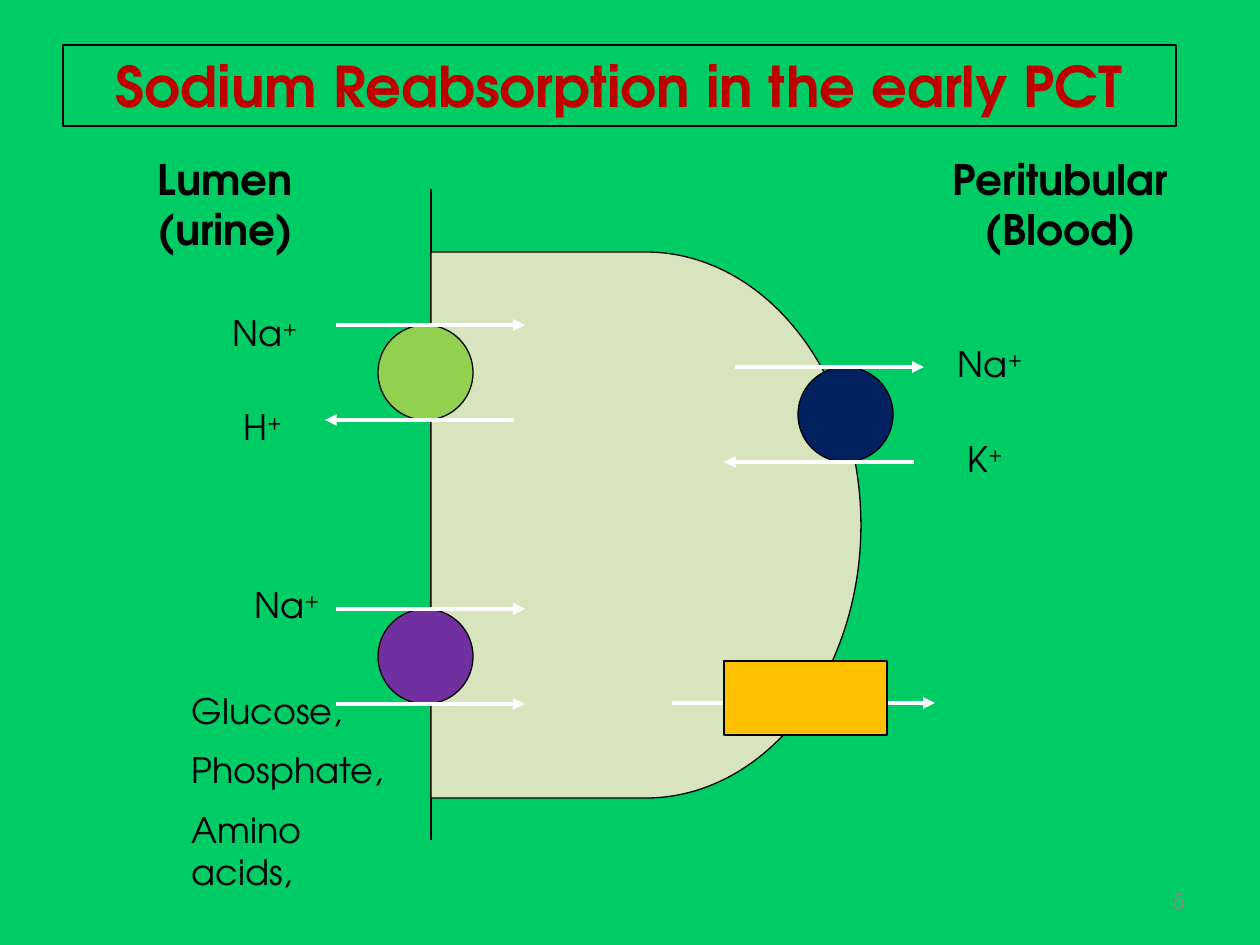
from dataclasses import dataclass

from lxml import etree
from pptx import Presentation
from pptx.dml.color import RGBColor
from pptx.enum.shapes import MSO_CONNECTOR, MSO_SHAPE
from pptx.enum.text import MSO_ANCHOR, MSO_AUTO_SIZE, PP_ALIGN
from pptx.oxml.ns import qn
from pptx.util import Emu, Pt

STRAIGHT = MSO_CONNECTOR.STRAIGHT
OVAL, RECTANGLE, DELAY = MSO_SHAPE.OVAL, MSO_SHAPE.RECTANGLE, MSO_SHAPE.FLOWCHART_DELAY
LEFT, CENTER, RIGHT = PP_ALIGN.LEFT, PP_ALIGN.CENTER, PP_ALIGN.RIGHT
TOP, MIDDLE = MSO_ANCHOR.TOP, MSO_ANCHOR.MIDDLE
EMU_PER_PX = 914400 / 126


@dataclass(frozen=True)
class Theme:
    font: str = "TeX Gyre Adventor"
    background: str = "00CC66"
    ink: str = "000000"
    title: str = "C00000"
    number: str = "8C8C8C"
    arrow: str = "FFFFFF"
    cell: str = "D7E4BD"
    exchanger: str = "92D050"
    pump: str = "002060"
    cotransporter: str = "7030A0"
    channel: str = "FFC000"
    title_size: int = 32
    side_size: int = 24
    solute_size: int = 20
    number_size: int = 12
    outline: float = 0.75
    arrow_width: float = 2.25


THEME = Theme()


@dataclass(frozen=True)
class Box:
    left: int
    top: int
    width: int
    height: int


@dataclass(frozen=True)
class Style:
    size: int
    color: str = THEME.ink
    bold: bool = False
    align: PP_ALIGN = LEFT
    anchor: MSO_ANCHOR = TOP
    gap: int = 0


@dataclass(frozen=True)
class Ion:
    symbol: str
    left: int
    top: int


@dataclass(frozen=True)
class Carrier:
    """A round membrane protein; each arrow is (start x, end x) at its top or bottom."""
    left: int
    top: int
    color: str
    upper: tuple[int, int]
    lower: tuple[int, int]


SOLUTE = Style(THEME.solute_size, gap=10)
SIDE = Style(THEME.side_size, bold=True, align=CENTER)
TITLE = Style(THEME.title_size, THEME.title, bold=True, align=CENTER)
NUMBER = Style(THEME.number_size, THEME.number, align=RIGHT, anchor=MIDDLE)

DIAMETER = 95
WALL_X = 431
WALL_SPANS = ((189, 325), (420, 609), (703, 840))
CELL = Box(WALL_X, 252, 430, 546)
CHANNEL = Box(724, 661, 163, 74)
CARRIERS = (
    Carrier(378, 325, THEME.exchanger, (336, 525), (514, 325)),
    Carrier(378, 609, THEME.cotransporter, (336, 525), (336, 525)),
    Carrier(798, 367, THEME.pump, (735, 924), (914, 724)),
)
IONS = (
    Ion("Na", 220, 305),
    Ion("H", 231, 399),
    Ion("Na", 242, 577),
    Ion("Na", 945, 336),
    Ion("K", 955, 431),
)
SIDES = (
    (Box(126, 147, 199, 115), ("Lumen", "(urine)")),
    (Box(924, 147, 273, 115), ("Peritubular", "(Blood)")),
)


def px(length: int) -> Emu:
    return Emu(round(length * EMU_PER_PX))


def rgb(color: str) -> RGBColor:
    return RGBColor.from_string(color)


def place(shape, box: Box) -> None:
    shape.left, shape.top = px(box.left), px(box.top)
    shape.width, shape.height = px(box.width), px(box.height)


def outline(line, color: str, width: float) -> None:
    line.color.rgb = rgb(color)
    line.width = Pt(width)


def add_run(paragraph, words: str, style: Style, superscript: bool = False) -> None:
    run = paragraph.add_run()
    run.text = words
    run.font.name = THEME.font
    run.font.size = Pt(style.size)
    run.font.bold = style.bold
    run.font.color.rgb = rgb(style.color)
    if superscript:
        run.font._element.set("baseline", "30000")


def write(shape, lines: tuple[str, ...], style: Style) -> None:
    frame = shape.text_frame
    frame.word_wrap = True
    frame.auto_size = MSO_AUTO_SIZE.NONE
    frame.vertical_anchor = style.anchor
    for index, words in enumerate(lines):
        paragraph = frame.add_paragraph() if index else frame.paragraphs[0]
        paragraph.alignment = style.align
        paragraph.space_before = Pt(style.gap if index else 0)
        add_run(paragraph, words, style)


def remove_bullets(shape) -> None:
    for paragraph in shape.text_frame.paragraphs:
        properties = paragraph._p.get_or_add_pPr()
        properties.set("marL", "0")
        properties.set("indent", "0")
        etree.SubElement(properties, qn("a:buNone"))


def add_text(slide, box: Box, lines: tuple[str, ...], style: Style):
    label = slide.shapes.add_textbox(0, 0, 0, 0)
    place(label, box)
    write(label, lines, style)
    return label


def add_ion(slide, ion: Ion) -> None:
    label = add_text(slide, Box(ion.left, ion.top, 95, 54), (ion.symbol,), SOLUTE)
    add_run(label.text_frame.paragraphs[0], "+", SOLUTE, superscript=True)


def add_solid(slide, kind: MSO_SHAPE, box: Box, color: str) -> None:
    solid = slide.shapes.add_shape(kind, 0, 0, 0, 0)
    place(solid, box)
    solid.shadow.inherit = False
    solid.fill.solid()
    solid.fill.fore_color.rgb = rgb(color)
    outline(solid.line, THEME.ink, THEME.outline)


def add_line(slide, start: tuple[int, int], end: tuple[int, int], color: str, width: float):
    connector = slide.shapes.add_connector(STRAIGHT, *map(px, start + end))
    outline(connector.line, color, width)
    etree.SubElement(connector._element.spPr, qn("a:effectLst"))
    return connector


def add_arrow(slide, span: tuple[int, int], y: int) -> None:
    arrow = add_line(slide, (span[0], y), (span[1], y), THEME.arrow, THEME.arrow_width)
    etree.SubElement(arrow.line._get_or_add_ln(), qn("a:tailEnd"), type="triangle")


def add_carrier(slide, carrier: Carrier) -> None:
    add_solid(slide, OVAL, Box(carrier.left, carrier.top, DIAMETER, DIAMETER), carrier.color)
    add_arrow(slide, carrier.upper, carrier.top)
    add_arrow(slide, carrier.lower, carrier.top + DIAMETER)


def main() -> None:
    deck = Presentation()
    deck.slide_width, deck.slide_height = px(1260), px(945)
    slide = deck.slides.add_slide(deck.slide_layouts[1])
    slide.background.fill.solid()
    slide.background.fill.fore_color.rgb = rgb(THEME.background)

    title, solutes = slide.shapes.title, slide.placeholders[1]
    place(title, Box(63, 45, 1113, 81))
    write(title, ("Sodium Reabsorption in the early PCT",), TITLE)
    outline(title.line, THEME.ink, THEME.outline)
    place(solutes, Box(179, 683, 242, 180))
    write(solutes, ("Glucose,", "Phosphate,", "Amino acids,"), SOLUTE)
    remove_bullets(solutes)

    for top, bottom in WALL_SPANS:
        add_line(slide, (WALL_X, top), (WALL_X, bottom), THEME.ink, THEME.outline)
    add_solid(slide, DELAY, CELL, THEME.cell)
    for carrier in CARRIERS:
        add_carrier(slide, carrier)
    add_arrow(slide, (672, 935), 703)
    add_solid(slide, RECTANGLE, CHANNEL, THEME.channel)

    for ion in IONS:
        add_ion(slide, ion)
    for box, lines in SIDES:
        add_text(slide, box, lines, SIDE)
    add_text(slide, Box(903, 876, 294, 50), ("5",), NUMBER)
    deck.save("out.pptx")


if __name__ == "__main__":
    main()
